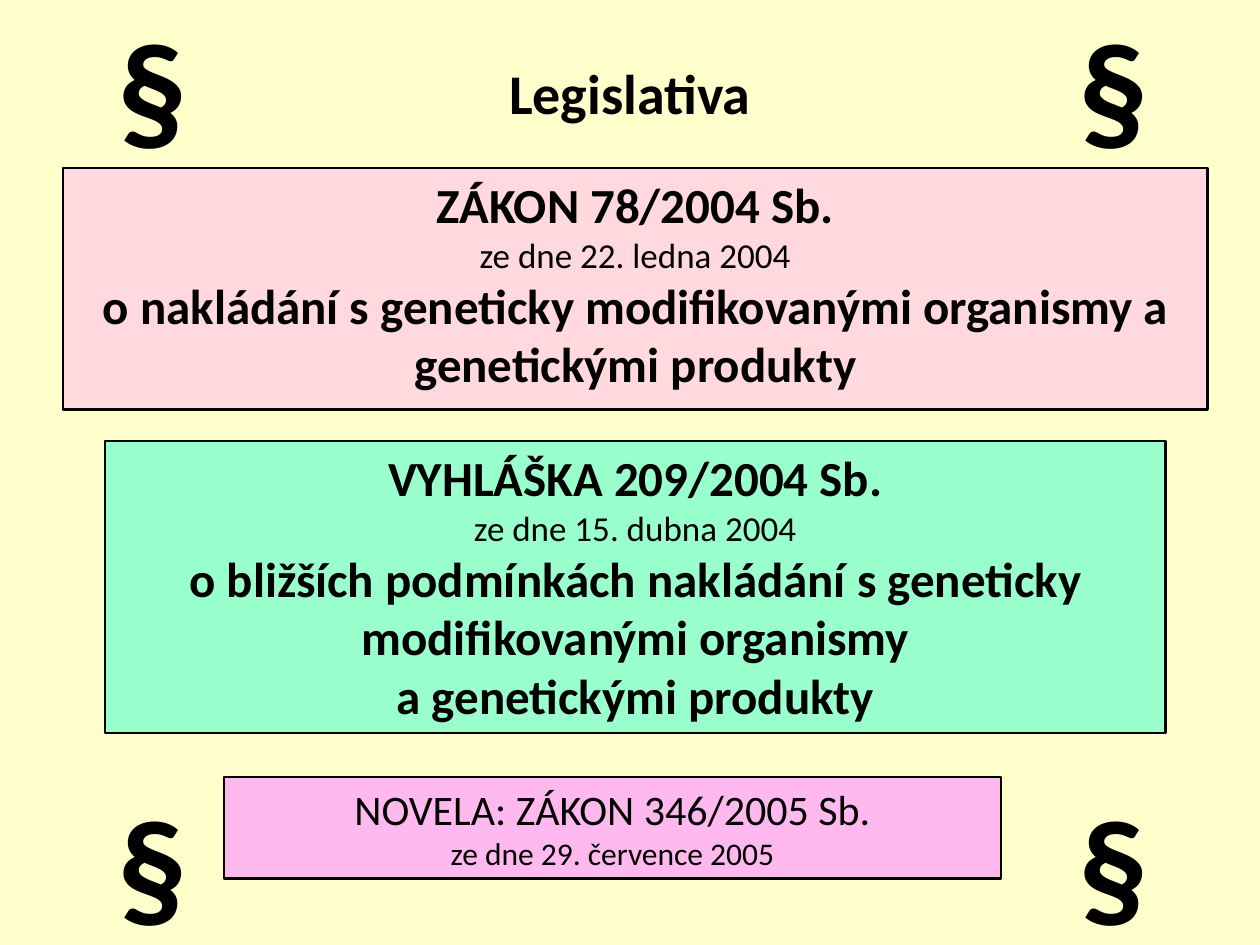
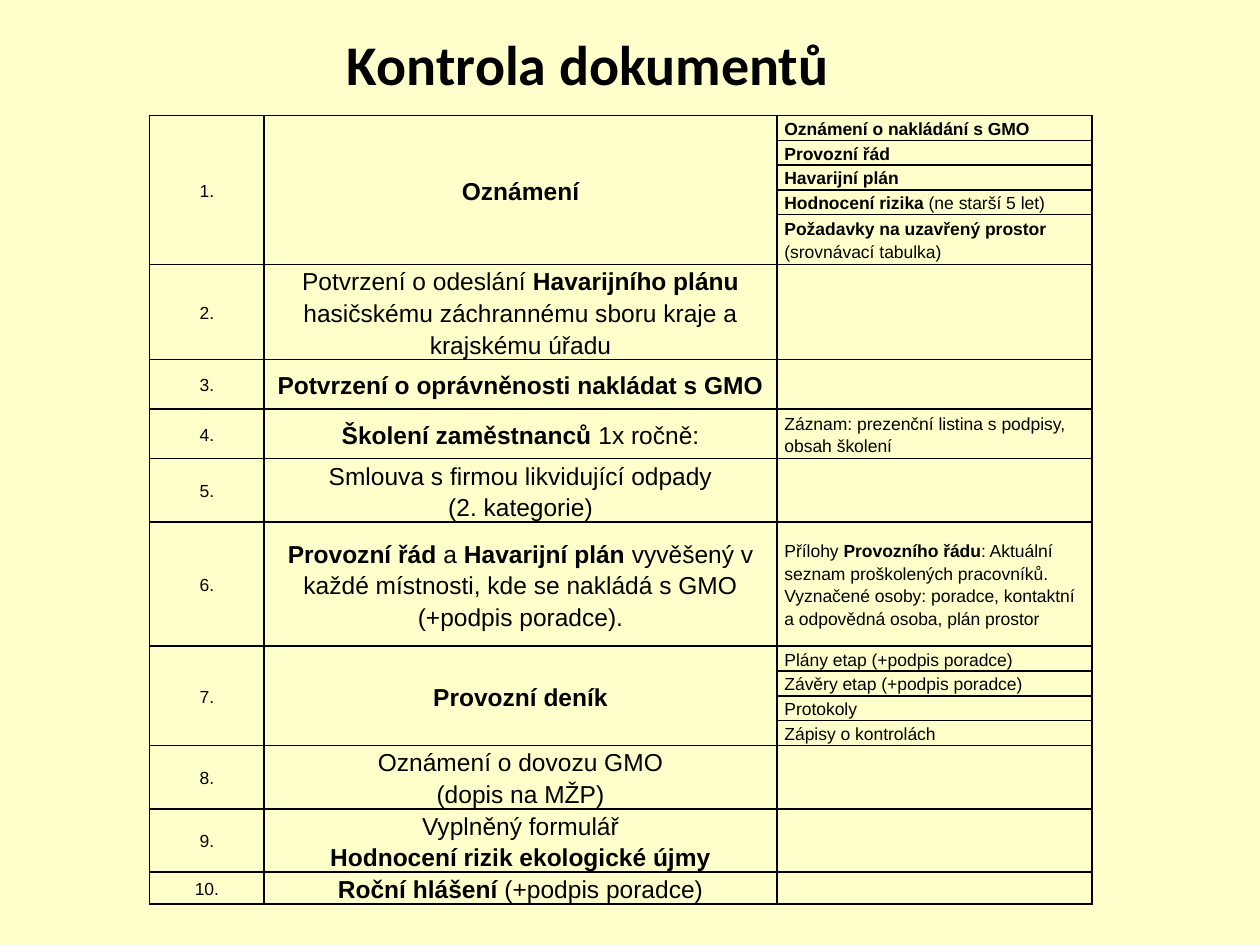
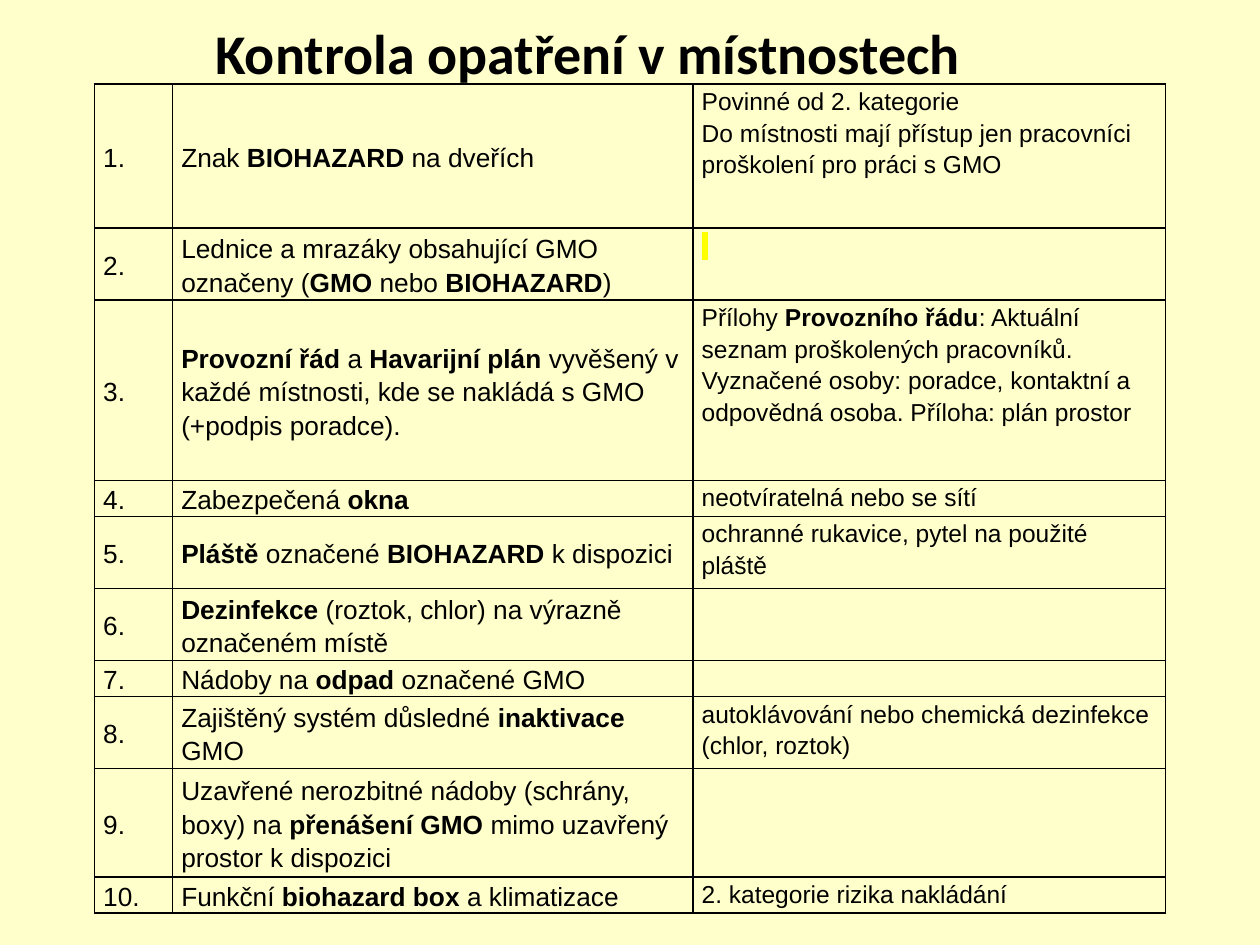
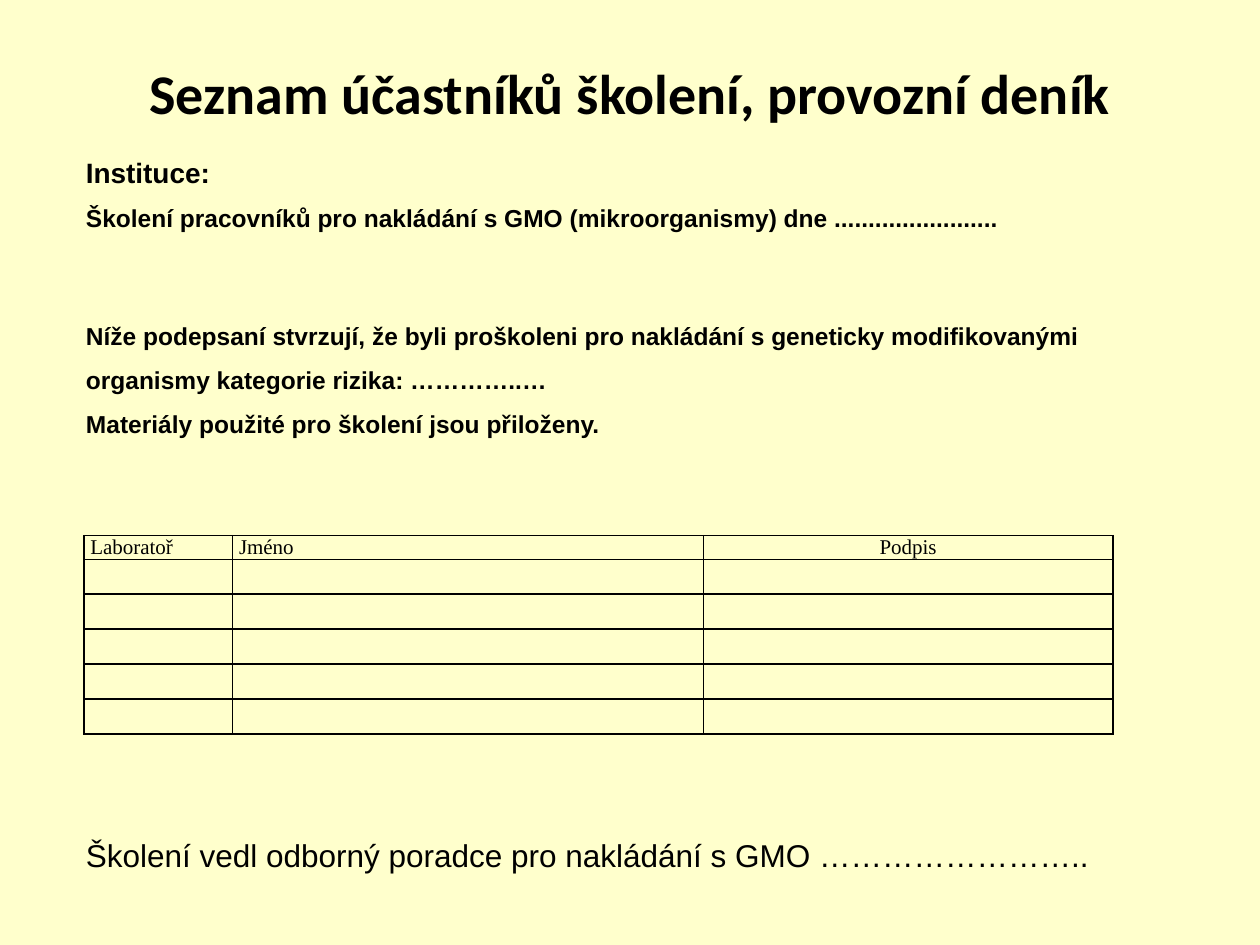
from dataclasses import dataclass
from itertools import cycle

from lxml.etree import SubElement
from pptx import Presentation
from pptx.dml.color import RGBColor
from pptx.enum.shapes import MSO_SHAPE
from pptx.enum.text import MSO_ANCHOR, MSO_AUTO_SIZE, PP_ALIGN
from pptx.oxml.ns import qn
from pptx.util import Pt


@dataclass(frozen=True)
class Theme:
    back: str = "FFFFCC"
    ink: str = "000000"
    pink: str = "FF99FF"
    mint: str = "99FFCC"
    mark: str = "FFFF00"
    head: str = "Calibri"
    body: str = "Arial"
    form: str = "Times New Roman"
    title: int = 32
    sign: int = 80
    law: int = 28
    date: int = 20
    empty: int = 8


T = Theme()
LEFT, MID = PP_ALIGN.LEFT, PP_ALIGN.CENTER

# Content: *stars* mark bold text, a new line in a cell starts a paragraph
TITLES = [
    ("Legislativa", (36, 21.6, 648, 62.6)),
    ("Kontrola dokumentů", (12, 12, 648, 48)),
    ("Kontrola opatření v místnostech", (12, 6, 648, 48)),
    ("Seznam účastníků školení, provozní deník", (36, 21.6, 648, 62.6)),
]

# Law boxes: place, fill, opacity in percent, lines of (text, bold, sizes)
LAWS = [
    ((36, 96, 654, 138), T.pink, 37, [
        ("ZÁKON 78/2004 Sb.", True, [T.law]),
        ("ze dne 22. ledna 2004", False, [T.date]),
        ("o nakládání s geneticky modifikovanými organismy a genetickými produkty",
         True, [T.law])]),
    ((60, 252, 606, 167), T.mint, 100, [
        ("VYHLÁŠKA 209/2004 Sb.", True, [T.law]),
        ("ze dne 15. dubna 2004", False, [T.date]),
        ("o bližších podmínkách nakládání s geneticky modifikovanými organismy\n"
         "a genetickými produkty", True, [T.law])]),
    ((128, 444, 444, 58.2), T.pink, 68, [
        ("NOVELA: ZÁKON 346/2005 Sb.\nze dne 29. července 2005", False, [24, 18])]),
]
SIGNS = [(x, y) for x in (36, 585.5) for y in (12, 456)]

# Checks: main text, then notes as (height in units, text)
PAPERS = [
    ("*Oznámení*", [(1, "*Oznámení o nakládání s GMO*"),
                    (1, "*Provozní řád*"),
                    (1, "*Havarijní plán*"),
                    (1, "*Hodnocení rizika* (ne starší 5 let)"),
                    (2, "*Požadavky na uzavřený prostor* (srovnávací tabulka)")]),
    ("Potvrzení o odeslání *Havarijního plánu* hasičskému záchrannému sboru "
     "kraje a krajskému úřadu", [(3, "")]),
    ("*Potvrzení o oprávněnosti nakládat s GMO*", [(2, "")]),
    ("*Školení zaměstnanců* 1x ročně:",
     [(2, "Záznam: prezenční listina s podpisy, obsah školení")]),
    ("Smlouva s firmou likvidující odpady\n(2. kategorie)", [(2, "")]),
    ("*Provozní řád* a *Havarijní plán* vyvěšený v každé místnosti, "
     "kde se nakládá s GMO (+podpis poradce).",
     [(5, "Přílohy *Provozního řádu*: Aktuální seznam proškolených pracovníků. "
          "Vyznačené osoby: poradce, kontaktní a odpovědná osoba, plán prostor")]),
    ("*Provozní deník*", [(1, "Plány etap (+podpis poradce)"),
                          (1, "Závěry etap (+podpis poradce)"),
                          (1, "Protokoly"),
                          (1, "Zápisy o kontrolách")]),
    ("Oznámení o dovozu GMO\n(dopis na MŽP)", [(2, "")]),
    ("Vyplněný formulář\n*Hodnocení rizik ekologické újmy*", [(2, "")]),
    ("*Roční hlášení* (+podpis poradce)", [(1, "")]),
]
ROOMS = [
    ("Znak *BIOHAZARD* na dveřích",
     [(4, "Povinné od 2. kategorie\n"
          "Do místnosti mají přístup jen pracovníci proškolení pro práci s GMO")]),
    ("Lednice a mrazáky obsahující GMO označeny (*GMO* nebo *BIOHAZARD*)",
     [(2, " ")]),
    ("*Provozní řád* a *Havarijní plán* vyvěšený v každé místnosti, "
     "kde se nakládá s GMO (+podpis poradce).",
     [(5, "Přílohy *Provozního řádu*: Aktuální seznam proškolených pracovníků. "
          "Vyznačené osoby: poradce, kontaktní a odpovědná osoba. "
          "Příloha: plán prostor")]),
    ("Zabezpečená *okna*", [(1, "neotvíratelná nebo se sítí")]),
    ("*Pláště* označené *BIOHAZARD* k dispozici",
     [(2, "ochranné rukavice, pytel na použité pláště")]),
    ("*Dezinfekce* (roztok, chlor) na výrazně označeném místě", [(2, "")]),
    ("Nádoby na *odpad* označené GMO", [(1, "")]),
    ("Zajištěný systém důsledné *inaktivace* GMO",
     [(2, "autoklávování nebo chemická dezinfekce (chlor, roztok)")]),
    ("Uzavřené nerozbitné nádoby (schrány, boxy) na *přenášení GMO* "
     "mimo uzavřený prostor k dispozici", [(3, "")]),
    ("Funkční *biohazard box* a klimatizace",
     [(1, "2. kategorie rizika nakládání")]),
]
HEADS = ["Laboratoř", "Jméno", "Podpis"]
BLANKS = 5

# Form lines: text, size, line spacing, space before
INTRO = [
    ("Instituce:", 16, 1, 0),
    ("Školení pracovníků pro nakládání s GMO (mikroorganismy) dne "
     "........................", 14, 1, 8),
    ("Níže podepsaní stvrzují, že byli proškoleni pro nakládání s geneticky "
     "modifikovanými organismy kategorie rizika: …………..…", 14, 1.5, 42),
    ("Materiály použité pro školení jsou přiloženy.", 14, 1.5, 0),
]
CLOSE = "Školení vedl odborný poradce pro nakládání s GMO …………………….."


# Text helpers
def color(code):
    return RGBColor.from_string(code)


def style(run, size, face, bold=False):
    font = run.font
    font.size, font.name, font.bold = Pt(size), face, bold
    font.color.rgb = color(T.ink)


def rich(par, text, size, face):
    for i, part in enumerate(text.split("*")):
        if part:
            run = par.add_run()
            run.text = part
            style(run, size, face, i % 2 == 1)


def paint(run):
    mark = SubElement(run.font._element, qn("a:highlight"))
    SubElement(mark, qn("a:srgbClr"), val=T.mark)
    run.font._element.find(qn("a:solidFill")).addnext(mark)


def lines(frame, items):
    """Yield one paragraph for each item."""
    for i, item in enumerate(items):
        yield (frame.add_paragraph() if i else frame.paragraphs[0]), item


def label(slide, place):
    box = slide.shapes.add_textbox(*map(Pt, place))
    box.text_frame.word_wrap = True
    return box.text_frame


# Shared slide parts
def start(deck, text, place):
    slide = deck.slides.add_slide(deck.slide_layouts[5])
    title = slide.shapes.title
    title.left, title.top, title.width, title.height = map(Pt, place)
    frame = title.text_frame
    frame.text = text
    frame.auto_size = MSO_AUTO_SIZE.NONE
    frame.vertical_anchor = MSO_ANCHOR.MIDDLE
    frame.paragraphs[0].alignment = MID
    style(frame.paragraphs[0].runs[0], T.title, T.head, True)
    return slide


def edge(cell):
    cell.fill.background()
    props = cell._tc.get_or_add_tcPr()
    for i, side in enumerate(("a:lnL", "a:lnR", "a:lnT", "a:lnB")):
        line = SubElement(props, qn(side), w=str(Pt(1)))
        fill = SubElement(line, qn("a:solidFill"))
        SubElement(fill, qn("a:srgbClr"), val=T.ink)
        props.insert(i, line)


def grid(slide, spot, cols, rows, pad):
    size = (sum(cols), sum(rows))
    table = slide.shapes.add_table(
        len(rows), len(cols), *map(Pt, spot + size)).table
    table.first_row = table.horz_banding = False
    for col, width in zip(table.columns, cols):
        col.width = Pt(width)
    for row, height in zip(table.rows, rows):
        row.height = Pt(height)
    for cell in table.iter_cells():
        edge(cell)
        cell.margin_left = cell.margin_right = Pt(pad)
        cell.margin_top = cell.margin_bottom = 0
    return table


def put(cell, text, size, face, align, anchor, space=1.15):
    cell.vertical_anchor = anchor
    for par, part in lines(cell.text_frame, text.split("\n")):
        par.alignment, par.line_spacing = align, space
        rich(par, part, size, face)


def shrink(table):
    """Keep empty cells from stretching their rows."""
    for cell in table.iter_cells():
        par = cell.text_frame.paragraphs[0]
        if not par.runs:
            SubElement(par._p, qn("a:endParaRPr"), sz=str(T.empty * 100))


def checks(slide, items, spot, cols, unit, pad, sizes, align, last):
    rows = [unit * n for _, notes in items for n, _ in notes]
    table = grid(slide, spot, cols, rows, pad)
    center = MSO_ANCHOR.MIDDLE
    top = 0
    for num, (text, notes) in enumerate(items, 1):
        end = top + len(notes) - 1
        for col, part in enumerate((f"{num}.", text)):
            cell = table.cell(top, col)
            if end > top:
                cell.merge(table.cell(end, col))
            put(cell, part, sizes[col], T.body, align, center)
        for row, (_, note) in enumerate(notes, top):
            put(table.cell(row, 2), note, sizes[2], T.body, LEFT, last)
        top = end + 1
    shrink(table)
    return table


# Slides
def laws(slide):
    for place, fill, alpha, texts in LAWS:
        box = slide.shapes.add_shape(MSO_SHAPE.RECTANGLE, *map(Pt, place))
        box.shadow.inherit = False
        box.fill.solid()
        box.fill.fore_color.rgb = color(fill)
        if alpha < 100:
            tint = box._element.spPr.find(qn("a:solidFill"))[0]
            SubElement(tint, qn("a:alpha"), val=str(alpha * 1000))
        box.line.color.rgb = color(T.ink)
        box.line.width = Pt(1.5)
        box.text_frame.vertical_anchor = MSO_ANCHOR.TOP
        for par, (text, bold, sizes) in lines(box.text_frame, texts):
            par.text = text
            par.alignment = MID
            for run, size in zip(par.runs, cycle(sizes)):
                style(run, size, T.head, bold)
    for spot in SIGNS:
        frame = label(slide, spot + (102, 74))
        frame.text = "§"
        frame.vertical_anchor = MSO_ANCHOR.MIDDLE
        frame.paragraphs[0].alignment = MID
        style(frame.paragraphs[0].runs[0], T.sign, T.head, True)


def papers(slide):
    checks(slide, PAPERS, (85.5, 66), (65.5, 293, 180), 14.2, 4.3,
           (10, 14, 10), MID, MSO_ANCHOR.MIDDLE)


def rooms(slide):
    table = checks(slide, ROOMS, (54, 48), (44.6, 297.4, 270), 20.6, 5,
                   (15, 15, 14), LEFT, MSO_ANCHOR.TOP)
    paint(table.cell(1, 2).text_frame.paragraphs[0].runs[0])


def roster(slide):
    table = grid(slide, (48, 306), (85, 269, 234), [13.6] + [20] * BLANKS, 3.6)
    for col, (head, align) in enumerate(zip(HEADS, (LEFT, LEFT, MID))):
        put(table.cell(0, col), head, 12, T.form, align, MSO_ANCHOR.TOP, 1)
    shrink(table)
    frame = label(slide, (42, 85, 624, 166))
    frame.vertical_anchor = MSO_ANCHOR.MIDDLE
    frame.margin_bottom = 0
    for par, (text, size, space, gap) in lines(frame, INTRO):
        par.text = text
        par.line_spacing, par.space_before = space, Pt(gap)
        style(par.runs[0], size, T.body, True)
    frame = label(slide, (42, 474, 624, 29))
    frame.text = CLOSE
    style(frame.paragraphs[0].runs[0], 18, T.body)


def main():
    deck = Presentation()
    deck.slide_width, deck.slide_height = Pt(720), Pt(540)
    fill = deck.slide_master.background.fill
    fill.solid()
    fill.fore_color.rgb = color(T.back)
    for (text, place), build in zip(TITLES, (laws, papers, rooms, roster)):
        build(start(deck, text, place))
    deck.save("out.pptx")


if __name__ == "__main__":
    main()
